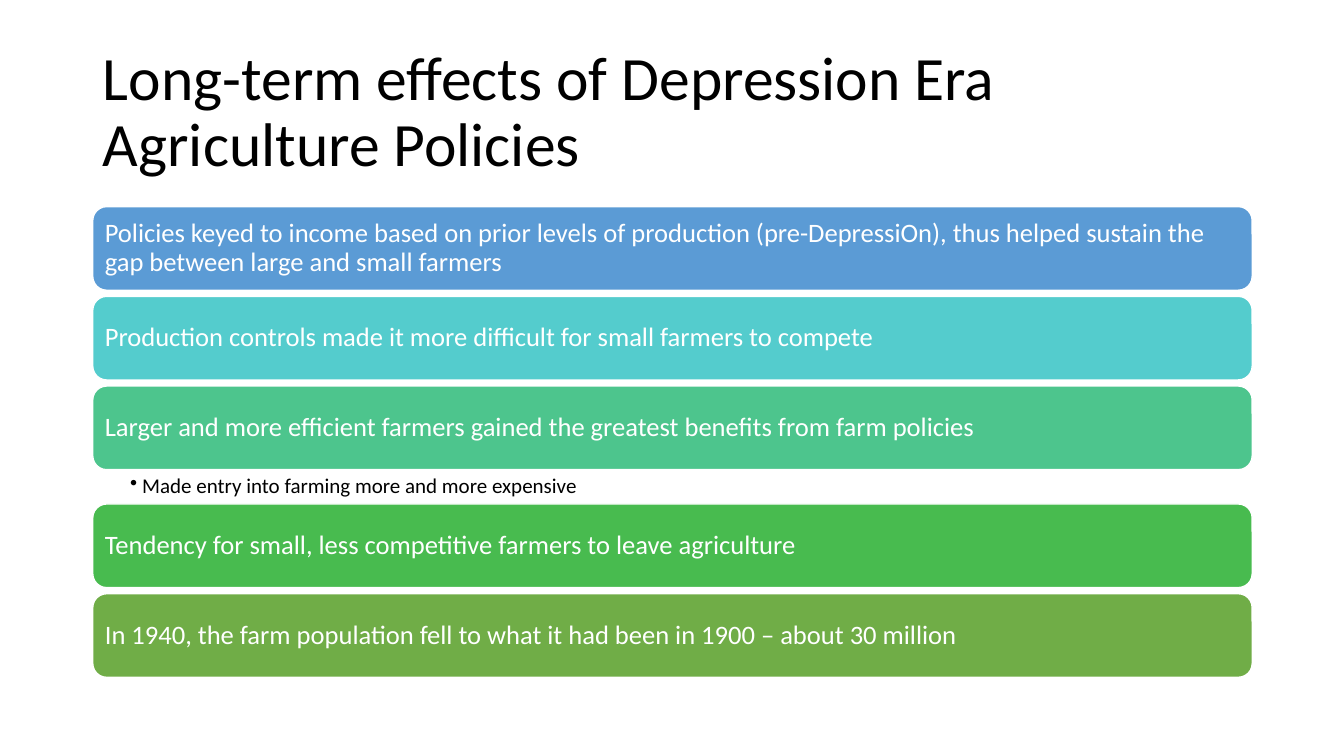
from lxml.etree import SubElement
from pptx import Presentation
from pptx.dml.color import RGBColor
from pptx.enum.shapes import MSO_SHAPE
from pptx.enum.text import MSO_ANCHOR, MSO_AUTO_SIZE, PP_ALIGN
from pptx.oxml.ns import qn
from pptx.util import Inches, Pt

LEFT, WIDTH = 0.92, 11.5
BAR_HEIGHT, BAR_GAP, DETAIL_HEIGHT = 0.83, 0.06, 0.34
EFFECTS = [
    ("Policies keyed to income based on prior levels of production (pre-DepressiOn), "
     "thus helped sustain the gap between large and small farmers", "5B9BD5", None),
    ("Production controls made it more difficult for small farmers to compete",
     "54CCCD", None),
    ("Larger and more efficient farmers gained the greatest benefits from farm policies",
     "4DC58D", "Made entry into farming more and more expensive"),
    ("Tendency for small, less competitive farmers to leave agriculture",
     "48BB4F", None),
    ("In 1940, the farm population fell to what it had been in 1900 – about 30 million",
     "70AD47", None),
]


def rgb(value):
    return RGBColor.from_string(value)


class PolicySlide:
    font_name = "Calibri"
    dark, light = "000000", "FFFFFF"

    def __init__(self, deck):
        self.slide = deck.slides.add_slide(deck.slide_layouts[5])

    def set_text(self, frame, text, size, color, anchor, insets):
        frame.word_wrap = True
        frame.auto_size = MSO_AUTO_SIZE.NONE
        frame.vertical_anchor = anchor
        (frame.margin_left, frame.margin_top,
         frame.margin_right, frame.margin_bottom) = map(Inches, insets)
        paragraph = frame.paragraphs[0]
        paragraph.text = text
        paragraph.alignment = PP_ALIGN.LEFT
        paragraph.font.name = self.font_name
        paragraph.font.size = Pt(size)
        paragraph.font.color.rgb = rgb(color)
        return paragraph

    def title(self, text, top, height):
        heading = self.slide.shapes.title
        heading.left, heading.top = Inches(LEFT), Inches(top)
        heading.width, heading.height = Inches(WIDTH), Inches(height)
        paragraph = self.set_text(heading.text_frame, text, 44, self.dark,
                                  MSO_ANCHOR.MIDDLE, (0.1, 0.05, 0.1, 0.05))
        paragraph.line_spacing = 0.9

    def bar(self, text, top, fill):
        effect = self.slide.shapes.add_shape(
            MSO_SHAPE.ROUNDED_RECTANGLE, Inches(LEFT), Inches(top),
            Inches(WIDTH), Inches(BAR_HEIGHT))
        effect.shadow.inherit = False
        effect.fill.solid()
        effect.fill.fore_color.rgb = rgb(fill)
        effect.line.color.rgb = rgb(self.light)
        effect.line.width = Pt(1)
        paragraph = self.set_text(effect.text_frame, text, 19, self.light,
                                  MSO_ANCHOR.MIDDLE, (0.08,) * 4)
        paragraph.line_spacing = 0.9

    def bullet(self, text, top):
        detail = self.slide.shapes.add_textbox(
            Inches(LEFT), Inches(top), Inches(WIDTH), Inches(DETAIL_HEIGHT))
        frame = detail.text_frame
        properties = frame.paragraphs[0]._p.get_or_add_pPr()
        properties.set("marL", str(Inches(0.12)))
        properties.set("indent", str(Inches(-0.12)))
        SubElement(properties, qn("a:buChar")).set("char", "•")
        paragraph = self.set_text(frame, text, 15, self.dark,
                                  MSO_ANCHOR.TOP, (0.37, 0.03, 0.15, 0.03))
        paragraph.level = 1


def main():
    deck = Presentation()
    deck.slide_width, deck.slide_height = Inches(13.33), Inches(7.5)
    page = PolicySlide(deck)
    page.title("Long-term effects of Depression Era Agriculture Policies", 0.4, 1.45)
    top = 2.05
    for effect, fill, detail in EFFECTS:
        page.bar(effect, top, fill)
        top += BAR_HEIGHT
        if detail:
            page.bullet(detail, top)
            top += DETAIL_HEIGHT
        else:
            top += BAR_GAP
    deck.save("out.pptx")


if __name__ == "__main__":
    main()
